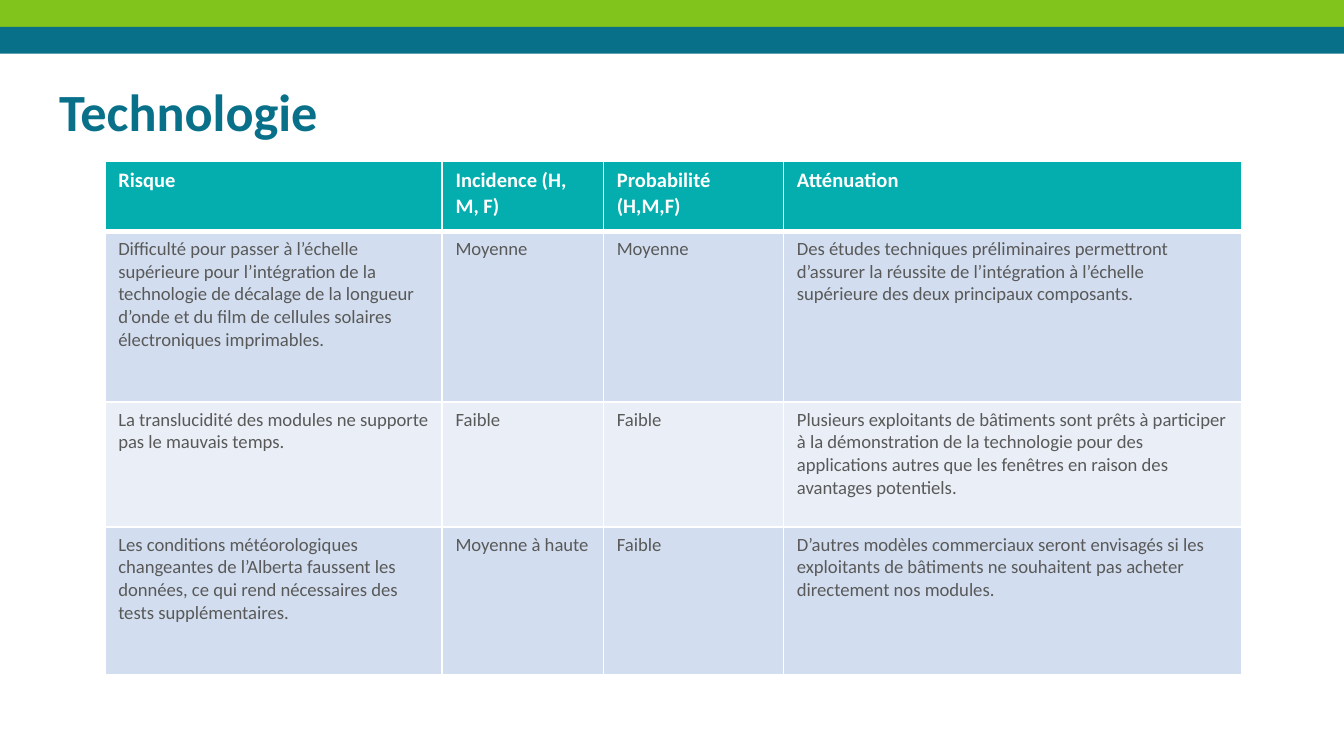
from dataclasses import dataclass

from lxml.etree import SubElement
from pptx import Presentation
from pptx.dml.color import RGBColor
from pptx.enum.shapes import MSO_SHAPE as Shape
from pptx.enum.text import MSO_ANCHOR as Anchor, PP_ALIGN as Align
from pptx.oxml.ns import qn
from pptx.util import Inches, Pt

COLORS = {
    "blue": "09708A",
    "green": "80C41C",
    "teal": "05AEAE",
    "band": "D2DEEF",
    "light": "EAEFF7",
    "text": "595959",
    "white": "FFFFFF",
}
FONT = "Calibri"
WIDTH = 10
HEIGHT = WIDTH * 9 / 16
STRIPE_H = 0.2
COL_WIDTHS = (2.51, 1.2, 1.34, 3.41)
ROW_HEIGHTS = (0.52, 1.27, 0.93, 1.1)


@dataclass
class Risk:
    name: str
    impact: str
    probability: str
    mitigation: str

    def cells(self) -> tuple[str, ...]:
        return self.name, self.impact, self.probability, self.mitigation


HEADER = Risk("Risque", "Incidence (H, M, F)", "Probabilité (H,M,F)", "Atténuation")
RISKS = [
    Risk("Difficulté pour passer à l’échelle supérieure pour l’intégration de la "
         "technologie de décalage de la longueur d’onde et du film de cellules "
         "solaires électroniques imprimables.",
         "Moyenne", "Moyenne",
         "Des études techniques préliminaires permettront d’assurer la réussite de "
         "l’intégration à l’échelle supérieure des deux principaux composants."),
    Risk("La translucidité des modules ne supporte pas le mauvais temps.",
         "Faible", "Faible",
         "Plusieurs exploitants de bâtiments sont prêts à participer à la "
         "démonstration de la technologie pour des applications autres que les "
         "fenêtres en raison des avantages potentiels."),
    Risk("Les conditions météorologiques changeantes de l’Alberta faussent les "
         "données, ce qui rend nécessaires des tests supplémentaires.",
         "Moyenne à haute", "Faible",
         "D’autres modèles commerciaux seront envisagés si les exploitants de "
         "bâtiments ne souhaitent pas acheter directement nos modules."),
]


def rgb(name: str) -> RGBColor:
    return RGBColor.from_string(COLORS[name])


def add_run(p, text: str, size: float, color: str, bold: bool) -> None:
    r = p.add_run()
    r.text = text
    r.font.name = FONT
    r.font.size = Pt(size)
    r.font.bold = bold
    r.font.color.rgb = rgb(color)


def add_stripe(s, index: int, color: str) -> None:
    sp = s.shapes.add_shape(Shape.RECTANGLE, 0, Inches(index * STRIPE_H),
                            Inches(WIDTH), Inches(STRIPE_H))
    sp.shadow.inherit = False
    sp.fill.solid()
    sp.fill.fore_color.rgb = rgb(color)
    sp.line.fill.background()


def set_borders(cell, top: float, bottom: float) -> None:
    """Give the cell white borders; the widths are in points."""
    tc_pr = cell._tc.get_or_add_tcPr()
    widths = {"lnL": 1, "lnR": 1, "lnT": top, "lnB": bottom}
    for side, width in widths.items():
        ln = SubElement(tc_pr, qn(f"a:{side}"), w=str(Pt(width)))
        fill = SubElement(ln, qn("a:solidFill"))
        SubElement(fill, qn("a:srgbClr"), val=COLORS["white"])


def add_risk_table(s, rows: list[Risk]) -> None:
    table = s.shapes.add_table(
        len(rows), len(COL_WIDTHS), Inches(0.78), Inches(1.2),
        Inches(sum(COL_WIDTHS)), Inches(sum(ROW_HEIGHTS))).table
    for column, width in zip(table.columns, COL_WIDTHS):
        column.width = Inches(width)
    for i, (risk, height) in enumerate(zip(rows, ROW_HEIGHTS)):
        table.rows[i].height = Inches(height)
        is_header = i == 0
        fill = "teal" if is_header else "band" if i % 2 else "light"
        for j, text in enumerate(risk.cells()):
            cell = table.cell(i, j)
            # Borders come before the fill in the cell properties
            set_borders(cell, top=3 if i == 1 else 1, bottom=3 if is_header else 1)
            cell.fill.solid()
            cell.fill.fore_color.rgb = rgb(fill)
            add_run(cell.text_frame.paragraphs[0], text, 11 if is_header else 10,
                    "white" if is_header else "text", is_header)


def add_title(s, text: str) -> None:
    sp = s.shapes.title
    sp.left, sp.top = Inches(0.34), Inches(0.49)
    sp.width, sp.height = Inches(9.32), Inches(0.63)
    tf = sp.text_frame
    tf.margin_left = tf.margin_right = tf.margin_top = tf.margin_bottom = Inches(0.1)
    tf.vertical_anchor = Anchor.TOP
    p = tf.paragraphs[0]
    p.alignment = Align.LEFT
    add_run(p, text, 28, "blue", True)


def main() -> None:
    prs = Presentation()
    prs.slide_width, prs.slide_height = Inches(WIDTH), Inches(HEIGHT)
    s = prs.slides.add_slide(prs.slide_layouts[5])

    # Top stripes
    for index, color in enumerate(("green", "blue")):
        add_stripe(s, index, color)

    # Title and risk table
    add_title(s, "Technologie")
    add_risk_table(s, [HEADER, *RISKS])

    prs.save("out.pptx")


if __name__ == "__main__":
    main()
